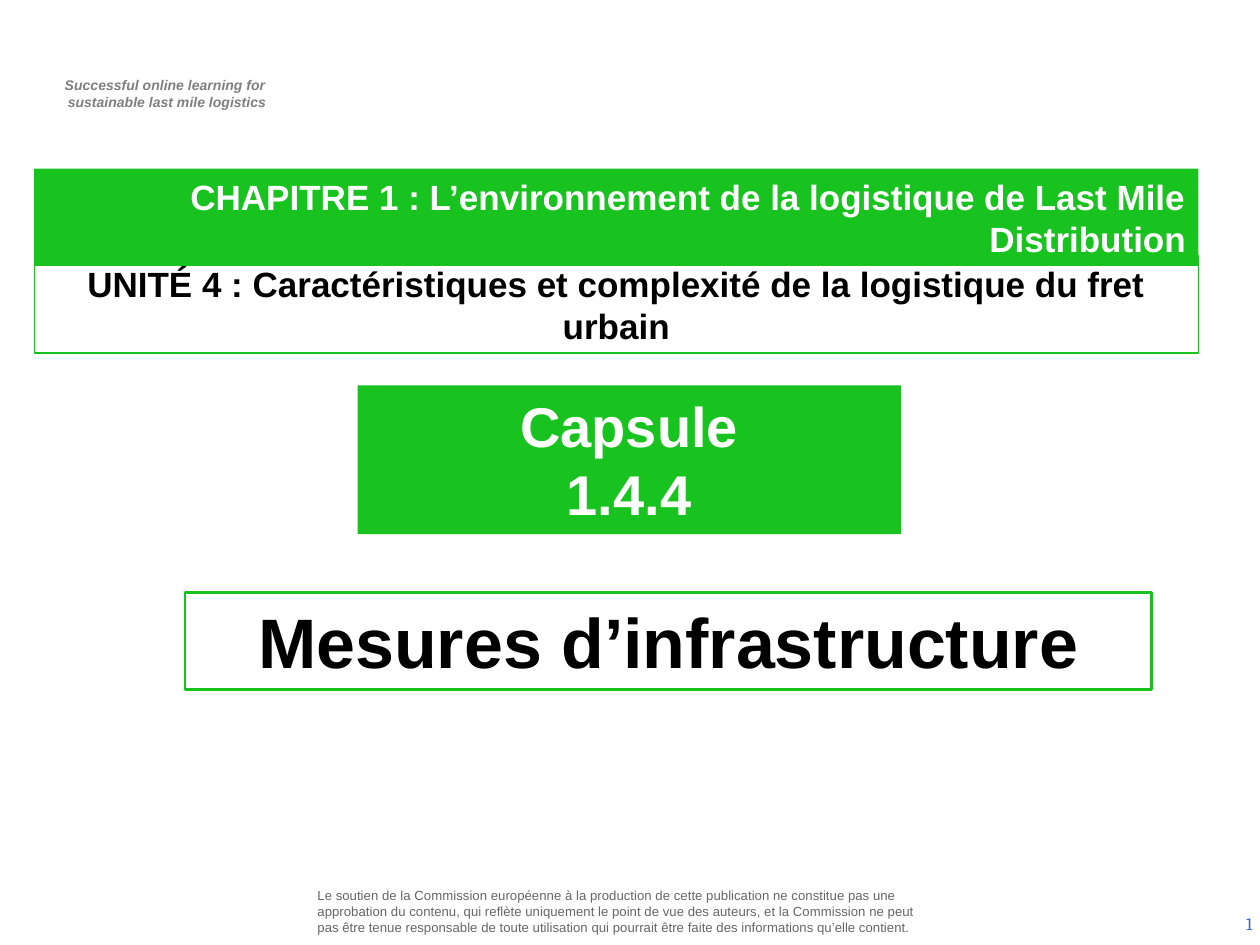
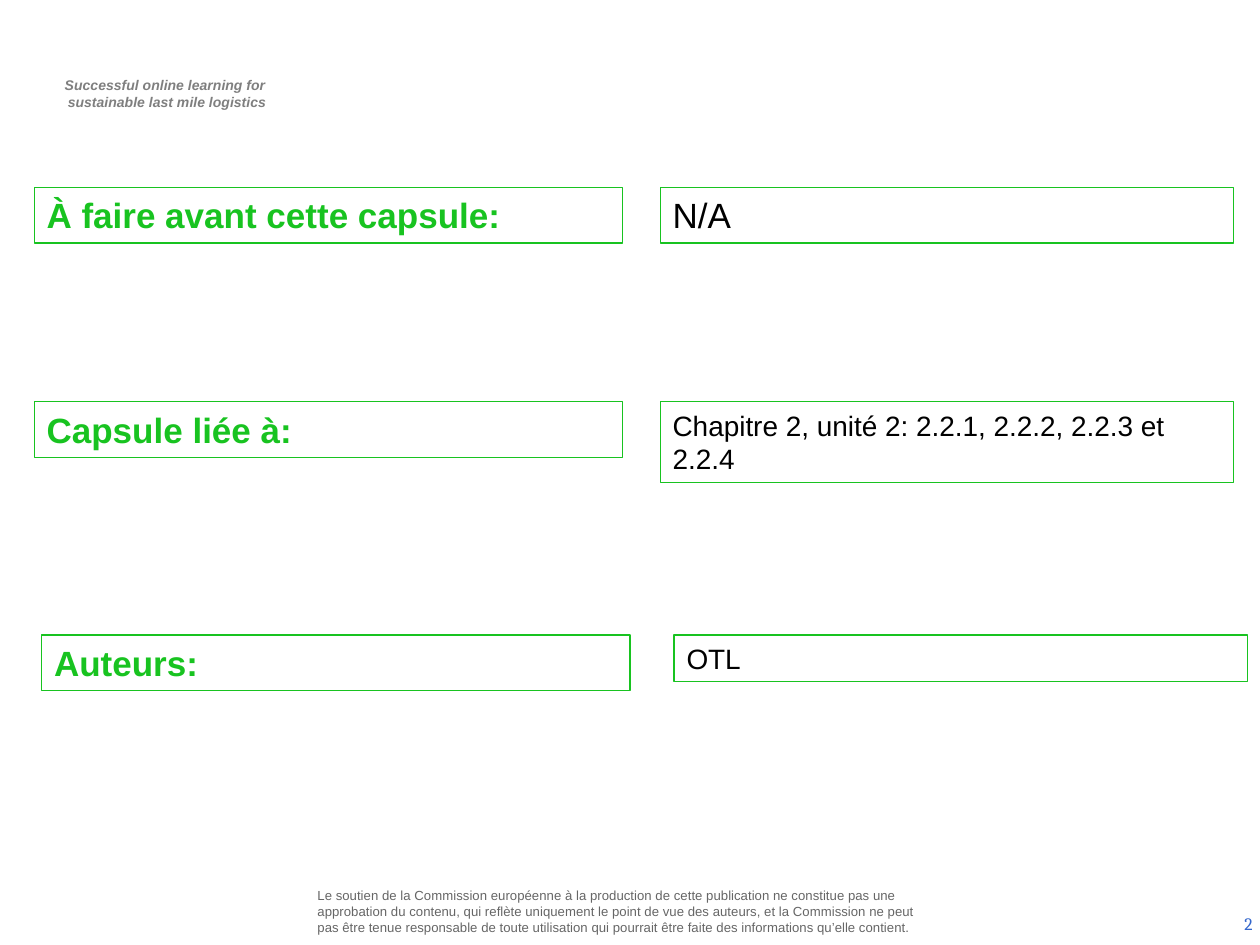
from dataclasses import dataclass

from pptx import Presentation
from pptx.dml.color import RGBColor
from pptx.enum.shapes import MSO_SHAPE
from pptx.enum.text import MSO_ANCHOR, MSO_AUTO_SIZE, PP_ALIGN
from pptx.slide import Slide
from pptx.text.text import TextFrame
from pptx.util import Cm, Pt

RECTANGLE = MSO_SHAPE.RECTANGLE
LEFT, CENTER, RIGHT = PP_ALIGN.LEFT, PP_ALIGN.CENTER, PP_ALIGN.RIGHT
TOP, MIDDLE = MSO_ANCHOR.TOP, MSO_ANCHOR.MIDDLE
FIT_SHAPE, NO_FIT = MSO_AUTO_SIZE.SHAPE_TO_FIT_TEXT, MSO_AUTO_SIZE.NONE

COLOURS = {
    "green": "18C320",
    "white": "FFFFFF",
    "black": "000000",
    "tagline": "7F7F7F",
    "disclaimer": "666666",
    "number": "3366CC",
}

TAGLINE = "Successful online learning for \nsustainable last mile logistics"
DISCLAIMER = (
    "Le soutien de la Commission européenne à la production de cette "
    "publication ne constitue pas une approbation du contenu, qui reflète "
    "uniquement le point de vue des auteurs, et la Commission ne peut pas "
    "être tenue responsable de toute utilisation qui pourrait être faite des "
    "informations qu’elle contient."
)


@dataclass
class TextStyle:
    size: float
    colour: str
    bold: bool = False
    italic: bool = False
    font: str = "Arial"
    align: PP_ALIGN = LEFT
    anchor: MSO_ANCHOR = TOP
    fit: MSO_AUTO_SIZE = FIT_SHAPE
    margins: tuple[float, float] = (0.25, 0.13)
    indent: float = 0


@dataclass
class Panel:
    """A rectangle with text; lengths are in centimetres."""
    text: str
    left: float
    top: float
    width: float
    height: float
    style: TextStyle
    fill: str | None = None
    line: str | None = None
    line_width: float = 0.75


@dataclass
class InfoRow:
    label: str
    value: str
    top: float
    value_size: float
    value_height: float
    label_left: float = 0.69
    value_left: float = 13.31


TAGLINE_STYLE = TextStyle(8, "tagline", bold=True, italic=True,
                          align=CENTER, indent=0.1)
DISCLAIMER_STYLE = TextStyle(7.5, "disclaimer", anchor=MIDDLE, fit=NO_FIT,
                             margins=(0.1, 0.1))
NUMBER_STYLE = TextStyle(10, "number", font="Cambria", align=RIGHT,
                         anchor=MIDDLE, fit=NO_FIT)
LABEL_STYLE = TextStyle(20, "green", bold=True)

TITLE_PANELS = [
    Panel("Capsule\n1.4.4", 7.21, 7.77, 10.95, 3,
          TextStyle(32, "white", bold=True, align=CENTER), fill="green"),
    Panel("Mesures d’infrastructure", 3.73, 11.94, 19.48, 1.96,
          TextStyle(40, "black", bold=True, align=CENTER),
          line="green", line_width=1.5),
    Panel("CHAPITRE 1 : L’environnement de la logistique de Last Mile "
          "Distribution", 0.69, 3.4, 23.47, 1.96,
          TextStyle(20, "white", bold=True, align=RIGHT), fill="green"),
    Panel("UNITÉ 4 : Caractéristiques et complexité de la logistique du fret "
          "urbain", 0.69, 5.16, 23.47, 1.96,
          TextStyle(20, "black", bold=True, align=CENTER), line="green"),
]

INFO_ROWS = [
    InfoRow("À faire avant cette capsule:", "N/A", 3.78, 20, 1.12),
    InfoRow("Capsule liée à:",
            "Chapitre 2, unité 2: 2.2.1, 2.2.2, 2.2.3 et 2.2.4",
            8.1, 16, 1.63),
    InfoRow("Auteurs:", "OTL", 12.8, 16, 0.94,
            label_left=0.84, value_left=13.59),
]


def rgb(name: str) -> RGBColor:
    return RGBColor.from_string(COLOURS[name])


def write_text(frame: TextFrame, text: str, style: TextStyle) -> None:
    frame.text = text
    frame.word_wrap = True
    frame.auto_size = style.fit
    frame.vertical_anchor = style.anchor
    side, edge = style.margins
    frame.margin_left = frame.margin_right = Cm(side)
    frame.margin_top = frame.margin_bottom = Cm(edge)
    for para in frame.paragraphs:
        para.alignment = style.align
        if style.indent:
            properties = para._p.get_or_add_pPr()
            properties.set("marL", str(Cm(style.indent)))
            properties.set("indent", "0")
        for span in para.runs:
            span.font.name = style.font
            span.font.size = Pt(style.size)
            span.font.bold = style.bold
            span.font.italic = style.italic
            span.font.color.rgb = rgb(style.colour)


def add_text(page: Slide, text: str, left: float, top: float, width: float,
             height: float, style: TextStyle) -> TextFrame:
    box = page.shapes.add_textbox(Cm(left), Cm(top), Cm(width), Cm(height))
    write_text(box.text_frame, text, style)
    return box.text_frame


def add_panel(page: Slide, panel: Panel) -> None:
    box = page.shapes.add_shape(RECTANGLE, Cm(panel.left), Cm(panel.top),
                                Cm(panel.width), Cm(panel.height))
    box.shadow.inherit = False
    if panel.fill:
        box.fill.solid()
        box.fill.fore_color.rgb = rgb(panel.fill)
    else:
        box.fill.background()
    if panel.line:
        box.line.color.rgb = rgb(panel.line)
        box.line.width = Pt(panel.line_width)
    else:
        box.line.fill.background()
    write_text(box.text_frame, panel.text, panel.style)


def add_info_row(page: Slide, row: InfoRow) -> None:
    add_panel(page, Panel(row.label, row.label_left, row.top, 11.86, 1.12,
                          LABEL_STYLE, fill="white", line="green"))
    add_panel(page, Panel(row.value, row.value_left, row.top, 11.56,
                          row.value_height, TextStyle(row.value_size, "black"),
                          fill="white", line="green"))


def add_page(deck: Presentation, number: int) -> Slide:
    """Add a blank page with the shared tagline, disclaimer and number."""
    page = deck.slides.add_slide(deck.slide_layouts[6])
    page.background.fill.solid()
    page.background.fill.fore_color.rgb = rgb("white")
    add_text(page, TAGLINE, 0.74, 1.42, 5.16, 0.94, TAGLINE_STYLE)
    add_text(page, DISCLAIMER, 6.3, 17.86, 12.52, 1.02, DISCLAIMER_STYLE)
    frame = add_text(page, str(number), 19.58, 18.11, 5.92, 1.02, NUMBER_STYLE)
    # Turn the run into a live slide number field
    field = frame.paragraphs[0].runs[0]._r
    field.tag = field.tag.replace("}r", "}fld")
    field.set("id", "{B6F15528-21DE-4FAA-801E-634DDDAF4B2B}")
    field.set("type", "slidenum")
    return page


def main() -> None:
    deck = Presentation()
    deck.slide_width, deck.slide_height = Cm(25.4), Cm(19.05)

    # Title page
    title_page = add_page(deck, 1)
    for panel in TITLE_PANELS:
        add_panel(title_page, panel)

    # Prerequisites, related capsules and authors
    info_page = add_page(deck, 2)
    for row in INFO_ROWS:
        add_info_row(info_page, row)

    deck.save("out.pptx")


if __name__ == "__main__":
    main()
